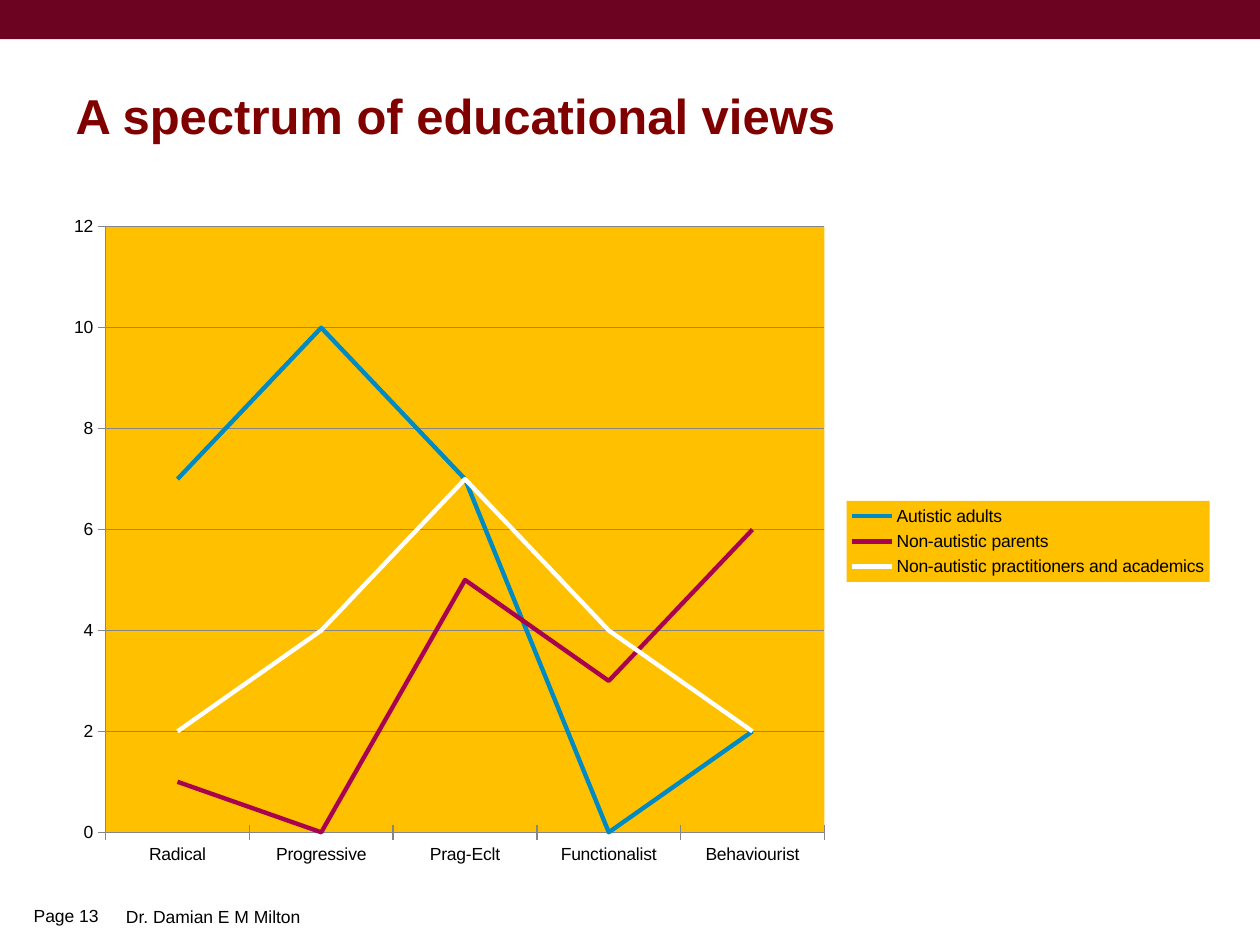
from typing import NamedTuple

from lxml import etree
from pptx import Presentation
from pptx.chart.data import CategoryChartData
from pptx.dml.color import RGBColor
from pptx.enum.chart import XL_CHART_TYPE, XL_LEGEND_POSITION, XL_MARKER_STYLE, XL_TICK_MARK
from pptx.enum.shapes import MSO_SHAPE
from pptx.enum.text import MSO_ANCHOR, PP_ALIGN
from pptx.oxml import parse_xml
from pptx.oxml.ns import nsdecls, qn
from pptx.util import Cm, Pt

LINE_CHART = XL_CHART_TYPE.LINE
LEGEND_RIGHT = XL_LEGEND_POSITION.RIGHT
NO_MARKER = XL_MARKER_STYLE.NONE
TICK_CROSS = XL_TICK_MARK.CROSS
RECTANGLE = MSO_SHAPE.RECTANGLE
TOP, MIDDLE = MSO_ANCHOR.TOP, MSO_ANCHOR.MIDDLE
LEFT = PP_ALIGN.LEFT

FONT = "Arial"
TITLE_ONLY = 5
COLORS = {
    "banner": "6C0421",
    "title": "800000",
    "text": "000000",
    "plot": "FFC000",
    "axis": "868686",
    "adults": "008AC4",
    "parents": "A8034F",
    "practitioners": "FFFFFF",
}
CATEGORIES = ["Radical", "Progressive", "Prag-Eclt", "Functionalist", "Behaviourist"]


class Box(NamedTuple):
    """Position and size in centimetres."""
    left: float
    top: float
    width: float
    height: float

    def lengths(self) -> list[Cm]:
        return [Cm(value) for value in self]


class Group(NamedTuple):
    name: str
    views: tuple[int, ...]
    color: str


class FooterItem(NamedTuple):
    text: str
    box: Box
    anchor: MSO_ANCHOR


class Layout(NamedTuple):
    """Place of a chart part, as fractions of the chart."""
    x: float
    y: float
    w: float
    h: float


GROUPS = [
    Group("Autistic adults", (7, 10, 7, 0, 2), "adults"),
    Group("Non-autistic parents", (1, 0, 5, 3, 6), "parents"),
    Group("Non-autistic practitioners and academics", (2, 4, 7, 4, 2), "practitioners"),
]
FOOTER = [
    FooterItem("Page 13", Box(0.43, 18.08, 1.88, 0.74), MIDDLE),
    FooterItem("Dr. Damian E M Milton", Box(2.29, 18.14, 18.03, 0.69), TOP),
]
BANNER_BOX = Box(0, 0, 25.4, 0.79)
TITLE_BOX = Box(1.27, 1.52, 23.04, 1.6)
CHART_BOX = Box(1.02, 4.11, 23.6, 13.61)
PLOT_LAYOUT = Layout(0.047, 0.034, 0.614, 0.897)
LEGEND_LAYOUT = Layout(0.68, 0.44, 0.31, 0.12)


def rgb(key: str) -> RGBColor:
    return RGBColor.from_string(COLORS[key])


def style_font(font, size: float, color: str, bold: bool = False) -> None:
    font.name = FONT
    font.size = Pt(size)
    font.bold = bold
    font.color.rgb = rgb(color)


def add_banner(slide) -> None:
    banner = slide.shapes.add_shape(RECTANGLE, *BANNER_BOX.lengths())
    banner.shadow.inherit = False
    banner.fill.solid()
    banner.fill.fore_color.rgb = rgb("banner")
    banner.line.fill.background()


def set_title(slide, text: str) -> None:
    title = slide.shapes.title
    title.left, title.top, title.width, title.height = TITLE_BOX.lengths()
    frame = title.text_frame
    frame.text = text
    frame.vertical_anchor = MIDDLE
    frame.paragraphs[0].alignment = LEFT
    style_font(frame.paragraphs[0].runs[0].font, 28, "title", bold=True)


def add_footer_item(slide, item: FooterItem) -> None:
    frame = slide.shapes.add_textbox(*item.box.lengths()).text_frame
    frame.word_wrap = True
    frame.vertical_anchor = item.anchor
    frame.text = item.text
    style_font(frame.paragraphs[0].runs[0].font, 10, "text")


def place_part(part, layout: Layout, index: int, inner: bool = False) -> None:
    """Give a plot area or legend a fixed place inside the chart."""
    for old in part.findall(qn("c:layout")):
        part.remove(old)
    element = parse_xml(f"<c:layout {nsdecls('c')}><c:manualLayout/></c:layout>")
    settings = {"layoutTarget": "inner"} if inner else {}
    settings |= {"xMode": "edge", "yMode": "edge"}
    settings |= {key: str(value) for key, value in layout._asdict().items()}
    for key, value in settings.items():
        etree.SubElement(element[0], qn(f"c:{key}"), val=value)
    part.insert(index, element)


def solid_fill(color: str):
    return parse_xml(
        f"<c:spPr {nsdecls('c', 'a')}><a:solidFill>"
        f'<a:srgbClr val="{COLORS[color]}"/></a:solidFill></c:spPr>'
    )


def add_views_chart(slide) -> None:
    data = CategoryChartData()
    data.categories = CATEGORIES
    for group in GROUPS:
        data.add_series(group.name, group.views)
    chart = slide.shapes.add_chart(LINE_CHART, *CHART_BOX.lengths(), data).chart
    chart.has_title = False
    style_font(chart.font, 10, "text")

    plot = chart.plots[0]
    plot.vary_by_categories = False
    for series, group in zip(plot.series, GROUPS):
        series.smooth = False
        series.marker.style = NO_MARKER
        series.format.line.width = Pt(2.5)
        series.format.line.color.rgb = rgb(group.color)

    chart.value_axis.has_major_gridlines = True
    axes = (chart.category_axis, chart.value_axis)
    for axis in axes:
        axis.major_tick_mark = TICK_CROSS
    for part in (*axes, chart.value_axis.major_gridlines):
        part.format.line.width = Pt(0.75)
        part.format.line.color.rgb = rgb("axis")

    chart.has_legend = True
    chart.legend.position = LEGEND_RIGHT
    chart.legend.include_in_layout = False
    chart_xml = chart.element.find(qn("c:chart"))
    plot_area = chart_xml.find(qn("c:plotArea"))
    place_part(plot_area, PLOT_LAYOUT, 0, inner=True)
    plot_area.append(solid_fill("plot"))
    legend = chart_xml.find(qn("c:legend"))
    place_part(legend, LEGEND_LAYOUT, 1)
    legend.find(qn("c:overlay")).addnext(solid_fill("plot"))


def main() -> None:
    prs = Presentation()
    prs.slide_width, prs.slide_height = Cm(25.4), Cm(19.05)
    slide = prs.slides.add_slide(prs.slide_layouts[TITLE_ONLY])
    add_banner(slide)
    set_title(slide, "A spectrum of educational views")
    for item in FOOTER:
        add_footer_item(slide, item)
    add_views_chart(slide)
    prs.save("out.pptx")


if __name__ == "__main__":
    main()
